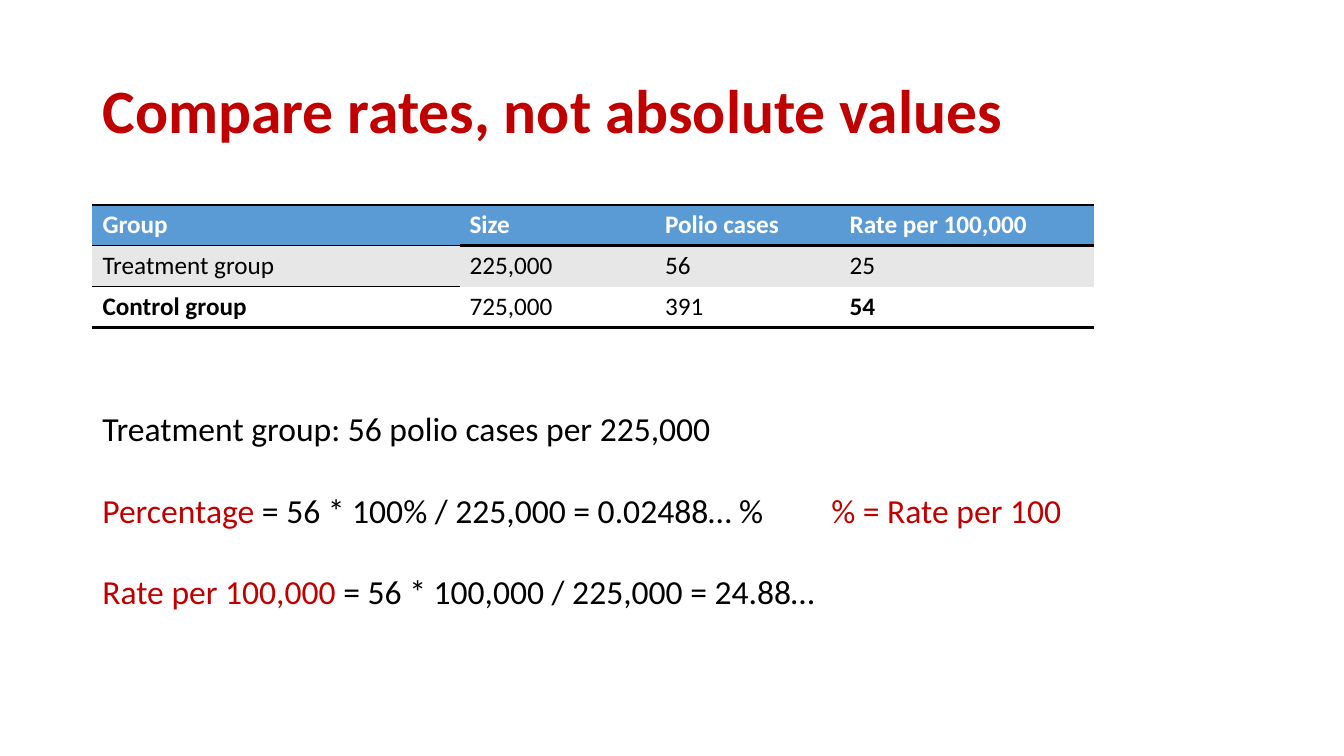
import lxml.etree
import pptx
import pptx.dml.color
import pptx.enum.text
import pptx.oxml.ns
import pptx.util

Cm, Pt = pptx.util.Cm, pptx.util.Pt
RGBColor = pptx.dml.color.RGBColor
qn = pptx.oxml.ns.qn

RED = RGBColor(0xC0, 0x00, 0x00)
BLACK = RGBColor(0x00, 0x00, 0x00)
WHITE = RGBColor(0xFF, 0xFF, 0xFF)
BLUE = RGBColor(0x5B, 0x9B, 0xD5)
GREY = RGBColor(0xE7, 0xE7, 0xE7)

FONT = "Calibri"
LEFT = Cm(2.33)
PLAIN_TABLE_STYLE = "{2D5ABB26-0587-4C30-8999-92F81FD0307C}"


def add_text(paragraph, text, size=18, color=BLACK, bold=False):
    """Append a formatted run to a paragraph."""
    run = paragraph.add_run()
    run.text = text
    run.font.name = FONT
    run.font.size = Pt(size)
    run.font.bold = bold
    run.font.color.rgb = color


def add_border(cell, side, width):
    """Draw one black edge of a cell; call before setting the fill."""
    properties = cell._tc.get_or_add_tcPr()
    line = lxml.etree.SubElement(properties, qn(f"a:ln{side}"), w=str(Pt(width)))
    fill = lxml.etree.SubElement(line, qn("a:solidFill"))
    lxml.etree.SubElement(fill, qn("a:srgbClr"), val=str(BLACK))


class SlideBuilder:
    def __init__(self, presentation):
        self.slide = presentation.slides.add_slide(presentation.slide_layouts[5])

    def title(self, text):
        title = self.slide.shapes.title
        title.left, title.top = LEFT, Cm(1.01)
        title.width, title.height = Cm(29.21), Cm(3.68)
        title.text_frame.vertical_anchor = pptx.enum.text.MSO_ANCHOR.MIDDLE
        paragraph = title.text_frame.paragraphs[0]
        paragraph.alignment = pptx.enum.text.PP_ALIGN.LEFT
        paragraph.line_spacing = 0.9
        add_text(paragraph, text, size=44, color=RED, bold=True)

    def table(self, top, widths, row_height, rows, fills, bold_cells, borders):
        frame = self.slide.shapes.add_table(
            len(rows), len(widths), LEFT, top, sum(widths), row_height * len(rows))
        table = frame.table
        table.horz_banding = False
        table._tbl.tblPr.find(qn("a:tableStyleId")).text = PLAIN_TABLE_STYLE
        for column, width in zip(table.columns, widths):
            column.width = width
        for r, values in enumerate(rows):
            table.rows[r].height = row_height
            for c, value in enumerate(values):
                cell = table.cell(r, c)
                if r == 0:
                    add_border(cell, "T", 2)
                if borders[r][c]:
                    add_border(cell, "B", borders[r][c])
                cell.fill.solid()
                cell.fill.fore_color.rgb = fills[r]
                add_text(cell.text_frame.paragraphs[0], value,
                         color=WHITE if r == 0 else BLACK,
                         bold=r == 0 or value in bold_cells)

    def formulas(self, top, width, height, lines, tab):
        box = self.slide.shapes.add_textbox(LEFT, top, width, height)
        frame = box.text_frame
        frame.word_wrap = True
        for index, runs in enumerate(lines):
            paragraph = frame.add_paragraph() if index else frame.paragraphs[0]
            if index:
                paragraph.space_before = Pt(29.3)
            properties = paragraph._p.get_or_add_pPr()
            tabs = lxml.etree.SubElement(properties, qn("a:tabLst"))
            lxml.etree.SubElement(tabs, qn("a:tab"), pos=str(tab), algn="l")
            for text, color in runs:
                add_text(paragraph, text, size=24, color=color)


def main():
    presentation = pptx.Presentation()
    presentation.slide_width, presentation.slide_height = Cm(33.87), Cm(19.05)
    builder = SlideBuilder(presentation)

    # Title
    builder.title("Compare rates, not absolute values")

    # Comparison table
    builder.table(
        top=Cm(5.16),
        widths=[Cm(9.25), Cm(4.93), Cm(4.65), Cm(6.4)],
        row_height=Cm(1.03),
        rows=[
            ["Group", "Size", "Polio cases", "Rate per 100,000"],
            ["Treatment group", "225,000", "56", "25"],
            ["Control group", "725,000", "391", "54"],
        ],
        fills=[BLUE, GREY, WHITE],
        bold_cells={"Control group", "54"},
        borders=[[1, 2, 2, 2], [1, 0, 0, 0], [2, 2, 2, 2]],
    )

    # Worked calculation
    builder.formulas(
        top=Cm(10.16), width=Cm(24.87), height=Cm(5.38), tab=Cm(18.37),
        lines=[
            [("Treatment group: 56 polio cases per 225,000", BLACK)],
            [("Percentage", RED),
             (" = 56 * 100% / 225,000 = 0.02488… %\t", BLACK),
             ("% = Rate per 100", RED)],
            [("Rate per 100,000 ", RED),
             ("= 56 * 100,000 / 225,000 = 24.88…", BLACK)],
        ],
    )

    presentation.save("out.pptx")


if __name__ == "__main__":
    main()
